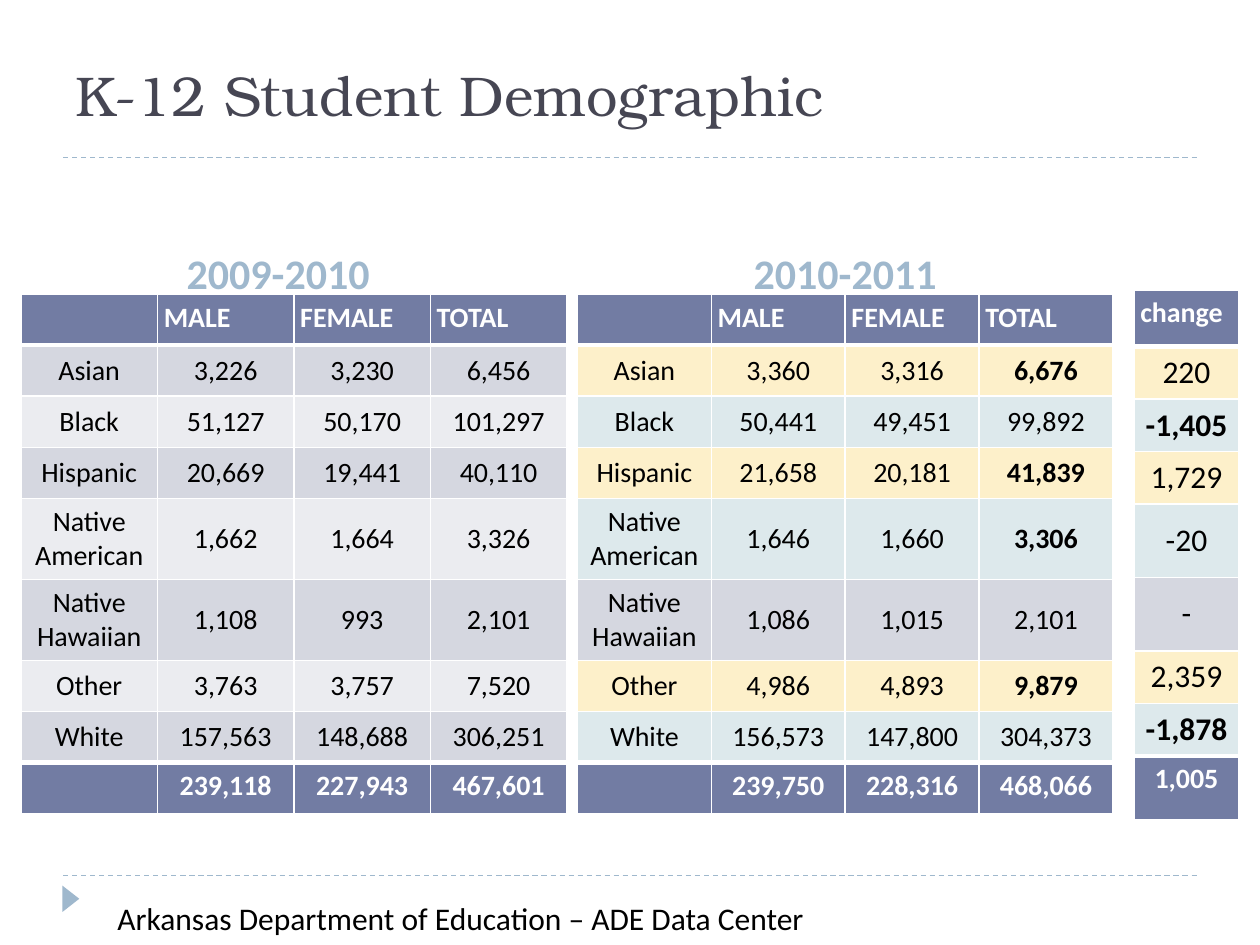
import pptx
import pptx.dml.color
import pptx.enum.dml
import pptx.enum.shapes
import pptx.enum.text
import pptx.oxml
import pptx.oxml.ns
import pptx.util

RGBColor = pptx.dml.color.RGBColor
WHITE = RGBColor(0xFF, 0xFF, 0xFF)
BLACK = RGBColor(0x00, 0x00, 0x00)
INK = RGBColor(0x46, 0x46, 0x53)
SKY = RGBColor(0x9F, 0xB8, 0xCD)
INDIGO = RGBColor(0x72, 0x7C, 0xA3)
MIST = RGBColor(0xD5, 0xD7, 0xE0)
PALE = RGBColor(0xEB, 0xEC, 0xF0)
CREAM = RGBColor(0xFD, 0xF0, 0xCA)
AQUA = RGBColor(0xDD, 0xE9, 0xEC)

LEFT = pptx.enum.text.PP_ALIGN.LEFT
CENTER = pptx.enum.text.PP_ALIGN.CENTER
TOP = pptx.enum.text.MSO_ANCHOR.TOP
MIDDLE = pptx.enum.text.MSO_ANCHOR.MIDDLE
BOTTOM = pptx.enum.text.MSO_ANCHOR.BOTTOM

HEADER = ["", "MALE", "FEMALE", "TOTAL"]
GROUPS = ["Asian", "Black", "Hispanic", "Native American", "Native Hawaiian", "Other", "White", ""]
COUNTS_2009 = [
    ["3,226", "3,230", "6,456"],
    ["51,127", "50,170", "101,297"],
    ["20,669", "19,441", "40,110"],
    ["1,662", "1,664", "3,326"],
    ["1,108", "993", "2,101"],
    ["3,763", "3,757", "7,520"],
    ["157,563", "148,688", "306,251"],
    ["239,118", "227,943", "467,601"],
]
COUNTS_2010 = [
    ["3,360", "3,316", "6,676"],
    ["50,441", "49,451", "99,892"],
    ["21,658", "20,181", "41,839"],
    ["1,646", "1,660", "3,306"],
    ["1,086", "1,015", "2,101"],
    ["4,986", "4,893", "9,879"],
    ["156,573", "147,800", "304,373"],
    ["239,750", "228,316", "468,066"],
]
CHANGES = ["change", "220", "-1,405", "1,729", "-20", "-", "2,359", "-1,878", "1,005"]
BOLD = {"6,676", "41,839", "3,306", "9,879", "-1,405", "-1,878"}
BANDED = [INDIGO, MIST, PALE, MIST, PALE, MIST, PALE, MIST, INDIGO]
TREND = [INDIGO, CREAM, AQUA, CREAM, AQUA, MIST, CREAM, AQUA, INDIGO]
EVEN_ROWS = [4.87] * 9
CHANGE_ROWS = [5.4, 5, 5, 5, 7, 7, 5, 5, 6.1]


class Deck:
    """Draws styled elements on the current slide, on a grid of 120 columns by 90 rows."""

    def __init__(self):
        self.prs = pptx.Presentation()
        self.prs.slide_width = pptx.util.Inches(10)
        self.prs.slide_height = pptx.util.Inches(7.5)
        self.font = {"name": "Calibri", "size": pptx.util.Pt(16), "bold": False}
        self.s = self.prs.slides.add_slide(self.prs.slide_layouts[4])

    def box(self, *cells):
        return [round(self.prs.slide_width / 120 * c) for c in cells]

    def add_text(self, tf, text, color, align=LEFT, before=0, **font):
        p = tf.paragraphs[0]
        p.alignment = align
        p.space_before = pptx.util.Pt(before)
        r = p.add_run()
        r.text = text
        r.font.color.rgb = color
        for key, value in {**self.font, **font}.items():
            setattr(r.font, key, value)

    def placeholder(self, idx, box, text, color, anchor, **style):
        sp = self.s.placeholders[idx]
        for key, value in zip(("left", "top", "width", "height"), self.box(*box)):
            setattr(sp, key, value)
        sp.text_frame.vertical_anchor = anchor
        self.add_text(sp.text_frame, text, color, **style)

    def drop(self, *indexes):
        for idx in indexes:
            el = self.s.placeholders[idx].element
            el.getparent().remove(el)

    def rule(self, row):
        x1, y, x2 = self.box(6, row, 114)
        ln = self.s.shapes.add_connector(pptx.enum.shapes.MSO_CONNECTOR.STRAIGHT, x1, y, x2, y)
        ln.line.color.rgb = SKY
        ln.line.width = pptx.util.Pt(0.75)
        ln.line.dash_style = pptx.enum.dml.MSO_LINE.DASH
        ln.element.spPr.append(pptx.oxml.parse_xml(f"<a:effectLst {pptx.oxml.ns.nsdecls('a')}/>"))

    def marker(self, box):
        kind = pptx.enum.shapes.MSO_SHAPE.ISOSCELES_TRIANGLE
        sp = self.s.shapes.add_shape(kind, *self.box(*box))
        sp.rotation = 90
        sp.shadow.inherit = False
        sp.fill.solid()
        sp.fill.fore_color.rgb = SKY
        sp.line.fill.background()

    def note(self, box, text):
        tf = self.s.shapes.add_textbox(*self.box(*box)).text_frame
        tf.word_wrap = True
        tf.auto_size = pptx.enum.text.MSO_AUTO_SIZE.SHAPE_TO_FIT_TEXT
        self.add_text(tf, text, BLACK, size=pptx.util.Pt(18))

    def borders(self, cell, **widths):
        tcPr = cell._tc.get_or_add_tcPr()
        for i, side in enumerate("LRTB"):
            width = pptx.util.Pt(widths.get(side, 1))
            tcPr.insert(i, pptx.oxml.parse_xml(
                f"<a:ln{side} {pptx.oxml.ns.nsdecls('a')} w='{width}'>"
                f"<a:solidFill><a:srgbClr val='{WHITE}'/></a:solidFill></a:ln{side}>"))

    def table(self, left, top, width, heights, rows, fills, size=16):
        box = self.box(left, top, width, sum(heights))
        tbl = self.s.shapes.add_table(len(rows), len(rows[0]), *box).table
        last = len(rows) - 1
        for col in tbl.columns:
            col.width = round(box[2] / len(rows[0]))
        for i, (row, height, fill) in enumerate(zip(rows, heights, fills)):
            tbl.rows[i].height = self.box(height)[0]
            edge = i in (0, last)
            for j, text in enumerate(row):
                cell = tbl.cell(i, j)
                for side in ("left", "right", "top", "bottom"):
                    setattr(cell, f"margin_{side}", pptx.util.Inches(0.05))
                cell.vertical_anchor = TOP if edge else MIDDLE
                cell.fill.solid()
                cell.fill.fore_color.rgb = fill
                self.borders(cell, T=3 if i in (1, last) else 1, B=3 if i in (0, last - 1) else 1)
                if text:
                    self.add_text(cell.text_frame, text, WHITE if edge else BLACK,
                                  CENTER if i else LEFT, bold=edge or text in BOLD,
                                  size=pptx.util.Pt(16 if edge else size))


def count_rows(counts):
    return [HEADER] + [[group, *row] for group, row in zip(GROUPS, counts)]


def main():
    deck = Deck()
    deck.rule(83.4)
    deck.rule(15)
    deck.marker((5.5, 84.8, 2.5, 1.6))
    deck.placeholder(0, (6, 3, 108, 12), "K-12 Student Demographic", INK, MIDDLE,
                     name="TeX Gyre Bonum", size=pptx.util.Pt(32))
    for idx, left, year in ((1, 0, "2009-2010"), (3, 54, "2010-2011")):
        deck.placeholder(idx, (left, 20, 53, 9), year, SKY, BOTTOM, align=CENTER,
                         before=6, size=pptx.util.Pt(24), bold=True)
    deck.drop(2, 4)
    deck.table(2, 28, 52, EVEN_ROWS, count_rows(COUNTS_2009), BANDED)
    deck.table(55, 28, 51, EVEN_ROWS, count_rows(COUNTS_2010), TREND)
    deck.table(108, 27.6, 10, CHANGE_ROWS, [[c] for c in CHANGES], TREND, size=18)
    deck.note((10, 85, 73, 5), "Arkansas Department of Education – ADE Data Center")
    deck.prs.save("out.pptx")


if __name__ == "__main__":
    main()
